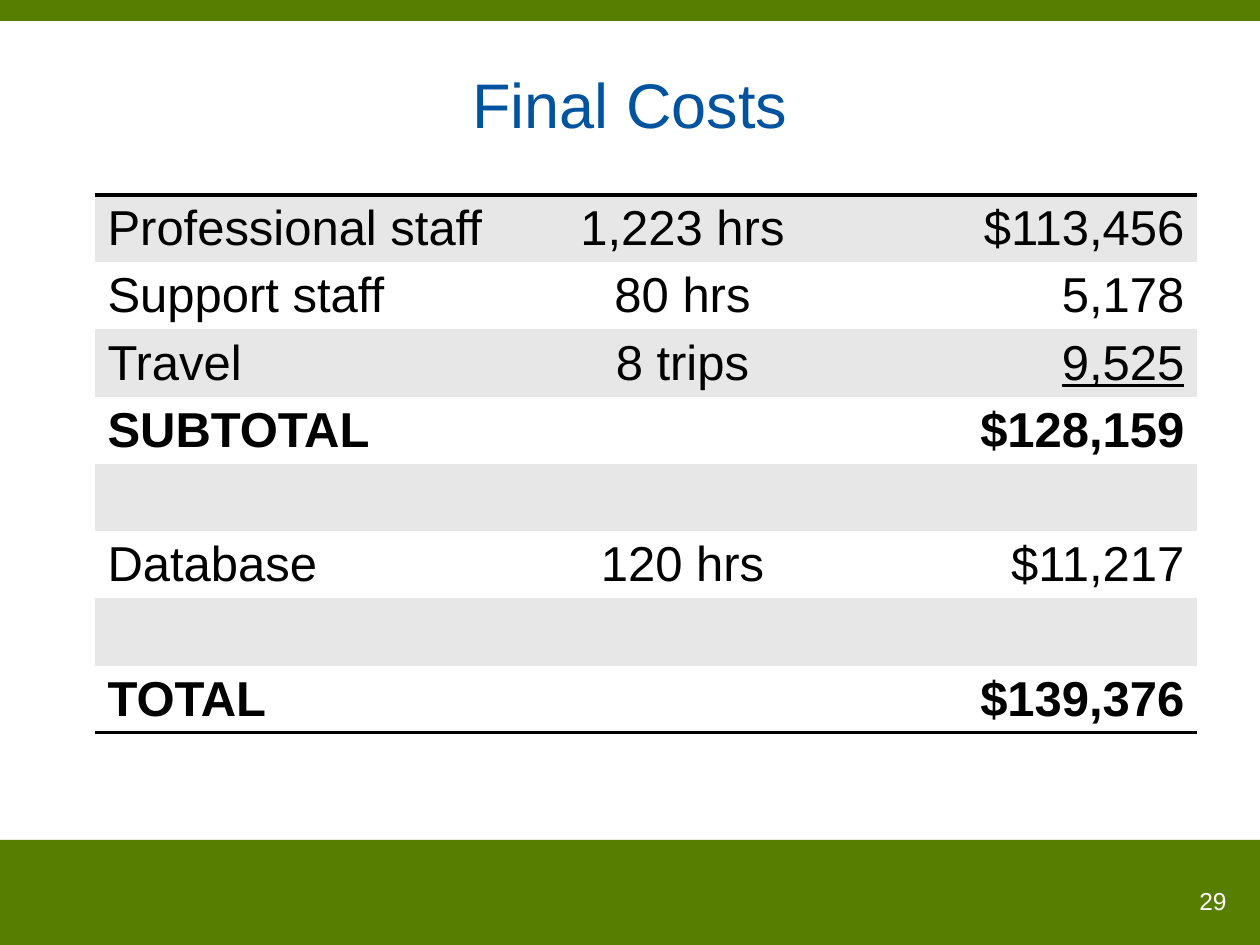
import lxml.etree
import pptx
import pptx.dml.color
import pptx.enum.shapes
import pptx.enum.text
import pptx.oxml.ns
import pptx.util

SCALE = 914400 / 126
ALIGN = pptx.enum.text.PP_ALIGN
MIDDLE = pptx.enum.text.MSO_ANCHOR.MIDDLE
THEME = {
    "font": "Arial",
    "green": "577E00",
    "blue": "00549F",
    "black": "000000",
    "white": "FFFFFF",
    "bands": ["E7E7E7", "FFFFFF"],
    "title": 36,
    "cell": 28,
    "number": 14,
    "rule": 2,
}


def px(*lengths):
    return [pptx.util.Emu(round(length * SCALE)) for length in lengths]


def write(para, text, size, color, align, **extra):
    para.alignment = align
    span = para.add_run()
    span.text = text
    formats = {"name": THEME["font"], "size": pptx.util.Pt(size), **extra}
    for name, value in formats.items():
        setattr(span.font, name, value)
    span.font.color.rgb = pptx.dml.color.RGBColor.from_string(color)


deck = pptx.Presentation()
deck.slide_width, deck.slide_height = px(1260, 945)
page = deck.slides.add_slide(deck.slide_layouts[5])

for top, height in [(840, 105), (0, 21)]:
    bar = page.shapes.add_shape(
        pptx.enum.shapes.MSO_SHAPE.RECTANGLE, *px(0, top, 1260, height)
    )
    bar.shadow.inherit = False
    bar.fill.solid()
    bar.fill.fore_color.rgb = pptx.dml.color.RGBColor.from_string(THEME["green"])
    bar.line.fill.background()

title = page.shapes.title
title.left, title.top, title.width, title.height = px(63, 38, 1134, 130)
title.text_frame.vertical_anchor = MIDDLE
write(title.text_frame.paragraphs[0], "Final Costs", THEME["title"], THEME["blue"], ALIGN.CENTER)

costs = [
    ["Professional staff", "1,223 hrs", "$113,456"],
    ["Support staff", "80 hrs", "5,178"],
    ["Travel", "8 trips", "9,525"],
    ["SUBTOTAL", "", "$128,159"],
    ["", "", ""],
    ["Database", "120 hrs", "$11,217"],
    ["", "", ""],
    ["TOTAL", "", "$139,376"],
]
aligns = [ALIGN.LEFT, ALIGN.CENTER, ALIGN.RIGHT]
last = len(costs) - 1
table = page.shapes.add_table(len(costs), 3, *px(95, 195, 1102, 538)).table
table.first_row = table.horz_banding = False
for column, width in zip(table.columns, px(428, 319, 355)):
    column.width = width

for i, entries in enumerate(costs):
    table.rows[i].height = px(538 / len(costs))[0]
    for j, text in enumerate(entries):
        cell = table.cell(i, j)
        cell.vertical_anchor = MIDDLE
        cell.margin_top, cell.margin_bottom = px(5, 5)
        props = cell._tc.get_or_add_tcPr()
        ruled = {"lnT": i == 0, "lnB": i == last}
        for side in ["lnL", "lnR", "lnT", "lnB"]:
            border = lxml.etree.SubElement(props, pptx.oxml.ns.qn("a:" + side))
            if ruled.get(side):
                border.set("w", str(pptx.util.Pt(THEME["rule"])))
                paint = lxml.etree.SubElement(border, pptx.oxml.ns.qn("a:solidFill"))
                color = lxml.etree.SubElement(paint, pptx.oxml.ns.qn("a:srgbClr"))
                color.set("val", THEME["black"])
            else:
                lxml.etree.SubElement(border, pptx.oxml.ns.qn("a:noFill"))
        cell.fill.solid()
        cell.fill.fore_color.rgb = pptx.dml.color.RGBColor.from_string(THEME["bands"][i % 2])
        if text:
            write(
                cell.text_frame.paragraphs[0], text, THEME["cell"], THEME["black"], aligns[j],
                bold=entries[0].endswith("TOTAL"), underline=text == "9,525",
            )

box = page.shapes.add_textbox(*px(1113, 880, 126, 65))
box.text_frame.word_wrap = True
write(box.text_frame.paragraphs[0], "29", THEME["number"], THEME["white"], ALIGN.RIGHT)

deck.save("out.pptx")
